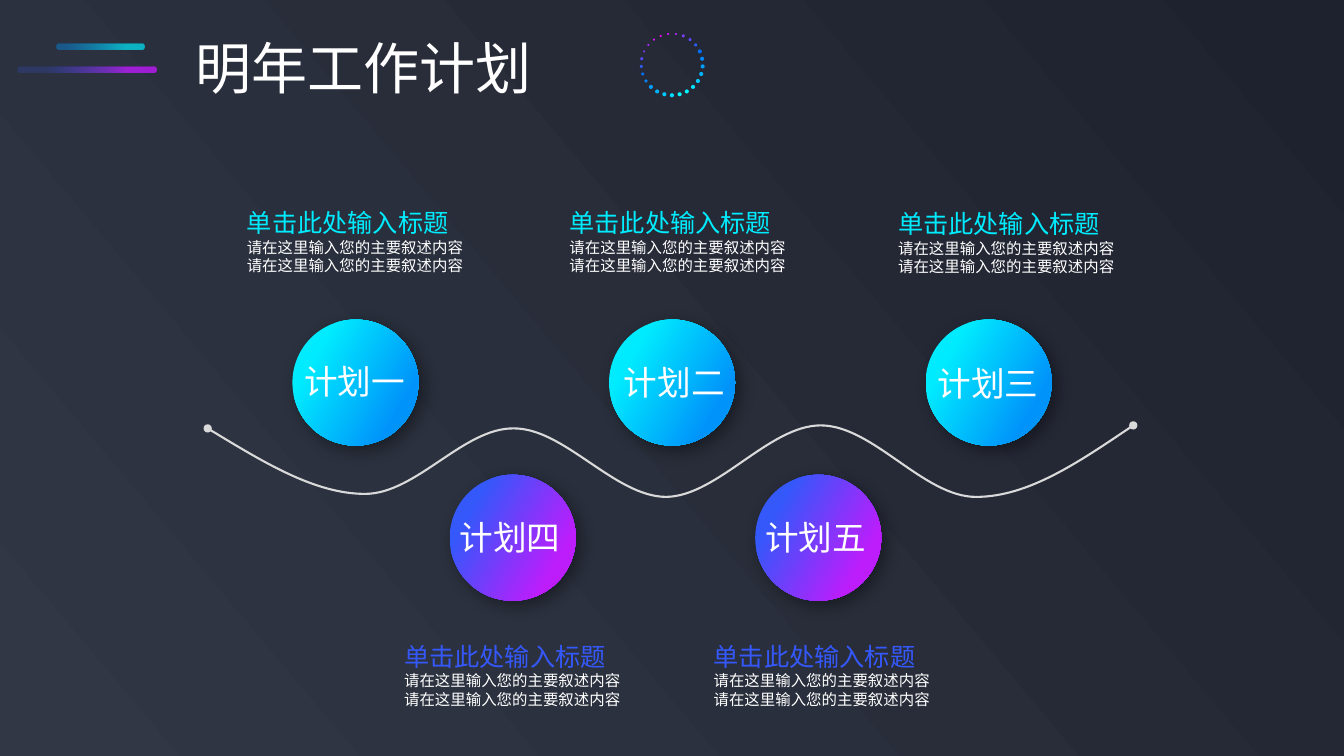
from dataclasses import dataclass
from math import cos, radians, sin

from lxml.etree import SubElement
from pptx import Presentation
from pptx.dml.color import RGBColor
from pptx.enum.shapes import MSO_SHAPE as Preset
from pptx.enum.text import MSO_ANCHOR as Anchor, MSO_AUTO_SIZE as AutoSize, PP_ALIGN as Align
from pptx.oxml.ns import qn
from pptx.util import Inches, Pt

WIDTH, HEIGHT = Inches(13.33), Inches(7.5)
ROWS = 75
CELL = HEIGHT / ROWS


@dataclass(frozen=True)
class Theme:
    font: str = "Noto Sans CJK SC"
    white: str = "FFFFFF"
    wave: str = "D9D9D9"
    shadow: str = "000000"
    night: tuple = ((0, "313745", 100), (100, "1E222E", 100))
    cyan: tuple = ((21, "00ECFE", 100), (80, "0094FA", 100))
    violet: tuple = ((21, "3558FB", 100), (80, "BE1DFB", 100))
    cyan_bar: tuple = ((10, "0094FA", 40), (79, "00ECFE", 70))
    violet_bar: tuple = ((21, "3558FB", 20), (80, "BE1DFB", 80))
    ring: tuple = (
        "01DEFF", "00F7FF", "00F7FF", "00DFFE", "01C9FD", "02B2FD", "029CFD",
        "0285FB", "036EFA", "2D5CFA", "5748FD", "7D3EFC", "9F26E7", "D813FB",
        "FC02F9", "D912FC", "AA27FB", "7F39F6", "564EFC", "2E5CFB", "026FF9",
        "0384FB", "029CFB", "02B2FD", "01C9FD")
    title_size: int = 40
    plan_size: int = 24
    heading_size: int = 18
    detail_size: int = 11


THEME = Theme()
RING_SIZES = [0.4] * 9 + [0.3] * 3 + [0.2] * 6 + [0.3] * 4 + [0.4] * 3
HEADING = "单击此处输入标题"
DETAIL = "请在这里输入您的主要叙述内容"
PLANS = [
    ("计划一", (29, 31.7), (29.2, 35.3), (23.5, 20.1), THEME.cyan),
    ("计划二", (60.4, 31.7), (60.9, 35.4), (55.5, 20.1), THEME.cyan),
    ("计划三", (91.8, 31.7), (92, 35.5), (88.1, 20.2), THEME.cyan),
    ("计划四", (44.6, 47.1), (44.6, 50.8), (39.1, 63.1), THEME.violet),
    ("计划五", (74.9, 47.1), (74.9, 50.8), (69.8, 63.1), THEME.violet),
]
WAVE = [
    (20.6, 42.5), (25.9, 45.7), (31.2, 49), (36.2, 49), (41.3, 49),
    (46, 42.4), (51, 42.5), (56, 42.5), (61, 49.3), (66.1, 49.3),
    (71.2, 49.2), (76.3, 42.2), (81.4, 42.2), (86.6, 42.2), (91.6, 49.3),
    (96.8, 49.3), (102, 49.3), (107.2, 45.7), (112.4, 42.2),
]


def cells(*counts):
    return [round(count * CELL) for count in counts]


def add_color(parent, color, opacity):
    value = SubElement(parent, qn("a:srgbClr"), val=color)
    if opacity < 100:
        SubElement(value, qn("a:alpha"), val=str(opacity * 1000))


def paint_gradient(fill, holder, stops, angle):
    fill.gradient()
    gradient = holder.find(qn("a:gradFill"))
    for child in list(gradient):
        gradient.remove(child)
    stop_list = SubElement(gradient, qn("a:gsLst"))
    for position, color, opacity in stops:
        stop = SubElement(stop_list, qn("a:gs"), pos=str(position * 1000))
        add_color(stop, color, opacity)
    SubElement(gradient, qn("a:lin"), ang=str(angle * 60000), scaled="0")


def add_plain(slide, preset, left, top, width, height):
    plain = slide.shapes.add_shape(preset, *cells(left, top, width, height))
    plain.shadow.inherit = False
    plain.line.fill.background()
    return plain


def style_frame(frame):
    frame.word_wrap = False
    frame.auto_size = AutoSize.SHAPE_TO_FIT_TEXT
    frame.vertical_anchor = Anchor.TOP


def style_paragraph(paragraph, size, stops=None):
    paragraph.alignment = Align.LEFT
    for run in paragraph.runs:
        run.font.size = Pt(size)
        run.font.name = THEME.font
        properties = run.font.fill and run._r.get_or_add_rPr()
        if stops:
            paint_gradient(run.font.fill, properties, stops, 30)
        else:
            run.font.color.rgb = RGBColor.from_string(THEME.white)
        east_asian = SubElement(properties, qn("a:ea"), typeface=THEME.font)
        properties.find(qn("a:latin")).addnext(east_asian)


def add_title(slide):
    title = slide.shapes.title
    title.left, title.top, title.width, title.height = cells(18.4, 2.8, 35.7, 7.7)
    title.text_frame.text = "明年工作计划"
    style_frame(title.text_frame)
    style_paragraph(title.text_frame.paragraphs[0], THEME.title_size)


def add_ring(slide, center_x, center_y, radius):
    step = 360 / len(THEME.ring)
    for index, (color, size) in enumerate(zip(THEME.ring, RING_SIZES)):
        turn = radians(index * step)
        left = center_x + radius * sin(turn) - size / 2
        top = center_y + radius * cos(turn) - size / 2
        dot = add_plain(slide, Preset.OVAL, left, top, size, size)
        dot.fill.solid()
        dot.fill.fore_color.rgb = RGBColor.from_string(color)


def add_bar(slide, left, top, width, stops):
    bar = add_plain(slide, Preset.ROUNDED_RECTANGLE, left, top, width, 0.55)
    bar.adjustments[0] = 0.42
    paint_gradient(bar.fill, bar.element.spPr, stops, 0)


def add_wave(slide):
    points = [cells(*point) for point in WAVE]
    builder = slide.shapes.build_freeform(*points[0])
    builder.add_line_segments(points[1:], close=False)
    wave = builder.convert_to_shape()
    wave.shadow.inherit = False
    wave.fill.background()
    wave.line.color.rgb = RGBColor.from_string(THEME.wave)
    wave.line.width = Pt(1.5)
    outline = wave.element.spPr.find(qn("a:ln"))
    for end in ("a:headEnd", "a:tailEnd"):
        SubElement(outline, qn(end), type="oval")
    segments = list(wave.element.iter(qn("a:lnTo")))
    track = segments[0].getparent()
    for start in range(0, len(segments), 3):
        curve = SubElement(track, qn("a:cubicBezTo"))
        for segment in segments[start:start + 3]:
            curve.append(segment[0])
            track.remove(segment)


def add_disc(slide, left, top, stops):
    disc = add_plain(slide, Preset.OVAL, left, top, 12.5, 12.5)
    paint_gradient(disc.fill, disc.element.spPr, stops, 30)
    effects = disc.element.spPr.find(qn("a:effectLst"))
    shadow = SubElement(effects, qn("a:outerShdw"), blurRad=str(Pt(12)),
                        dist=str(Pt(5)), dir=str(45 * 60000), algn="tl", rotWithShape="0")
    add_color(shadow, THEME.shadow, 40)


def add_text(slide, left, top, width, height, lines):
    frame = slide.shapes.add_textbox(*cells(left, top, width, height)).text_frame
    frame.text = "\n".join(text for text, _, _ in lines)
    style_frame(frame)
    for paragraph, (_, size, stops) in zip(frame.paragraphs, lines):
        style_paragraph(paragraph, size, stops)


def main():
    deck = Presentation()
    deck.slide_width, deck.slide_height = WIDTH, HEIGHT
    slide = deck.slides.add_slide(deck.slide_layouts[5])
    backdrop = slide.background.fill
    paint_gradient(backdrop, slide.element.find(".//" + qn("p:bgPr")), THEME.night, 320)
    add_ring(slide, 66.65, 6.4, 3.05)
    add_bar(slide, 1.75, 6.62, 13.8, THEME.violet_bar)
    add_bar(slide, 5.6, 4.38, 8.7, THEME.cyan_bar)
    add_title(slide)
    add_wave(slide)
    detail = (DETAIL, THEME.detail_size, None)
    for name, disc_at, name_at, note_at, stops in PLANS:
        add_disc(slide, *disc_at, stops)
        add_text(slide, *name_at, 12.1, 5, [(name, THEME.plan_size, None)])
        heading = (HEADING, THEME.heading_size, stops)
        add_text(slide, *note_at, 23.6, 12.5, [heading, detail, detail])
    deck.save("out.pptx")


if __name__ == "__main__":
    main()
